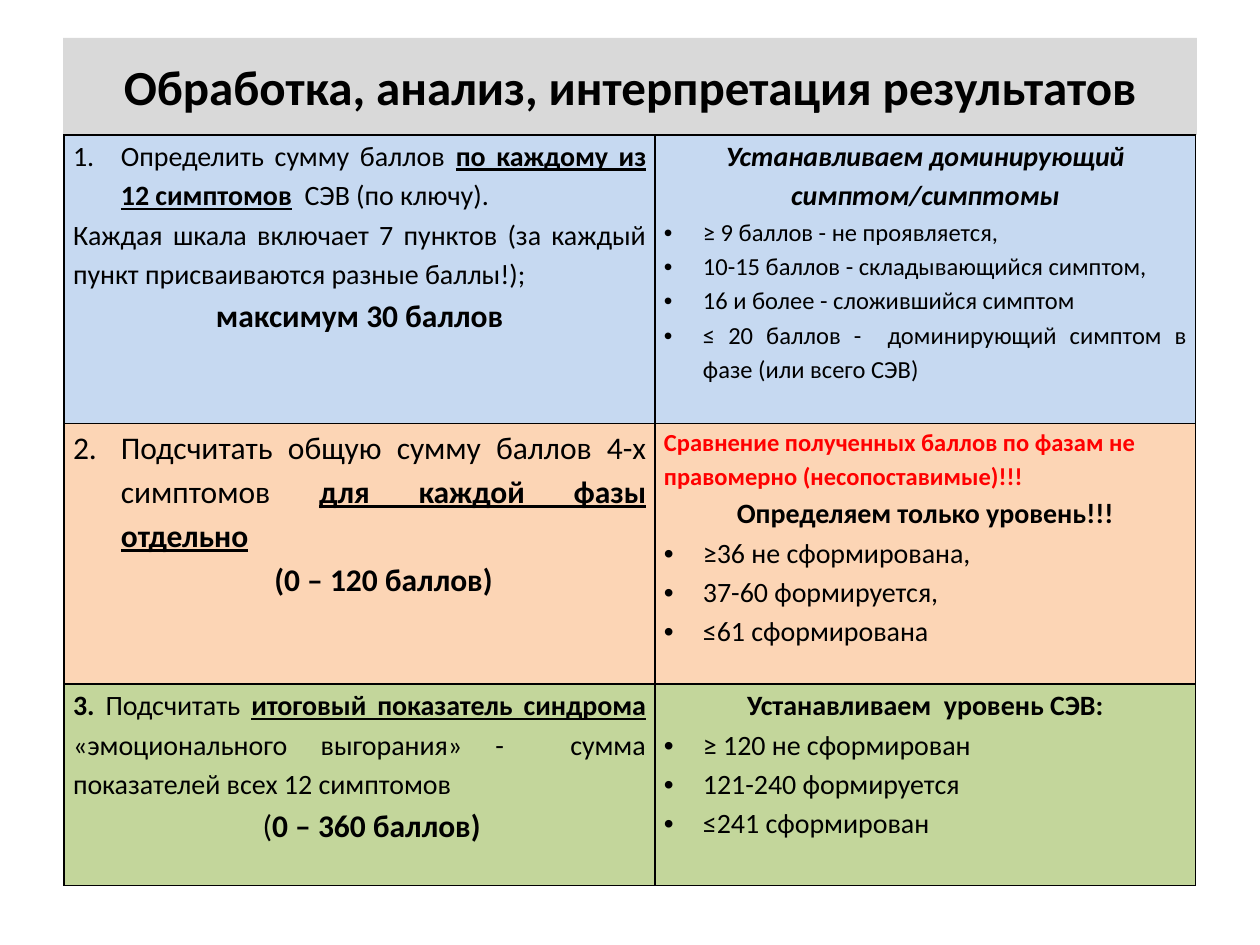
from lxml import etree
from pptx import Presentation
from pptx.dml.color import RGBColor
from pptx.enum import text
from pptx.oxml import ns
from pptx.util import Inches, Pt

FONT = "Calibri"
BLACK, RED, GREY = "000000", "FF0000", "D9D9D9"
BLUE, ORANGE, GREEN = "C6D9F1", "FCD5B5", "C3D69B"
LEFT, CENTER, JUSTIFY = (text.PP_ALIGN.LEFT, text.PP_ALIGN.CENTER,
                         text.PP_ALIGN.JUSTIFY)
KEY = {"bold": True, "underline": True}


def color(value):
    return RGBColor.from_string(value)


def add_xml(parent, tag, **attributes):
    return etree.SubElement(parent, ns.qn(tag),
                            {name: str(value) for name, value in attributes.items()})


def write(paragraph, *parts, size=16, bold=False, italic=False, hue=BLACK,
          align=JUSTIFY, spacing=1.15, indent=0, hanging=0, bullet=None, number=None):
    """Fill a paragraph; a part is a string or a (string, font settings) pair."""
    paragraph.alignment = align
    paragraph.line_spacing = spacing
    paragraph.space_before = paragraph.space_after = Pt(0)
    properties = paragraph._p.get_or_add_pPr()
    properties.set("marL", str(Inches(indent + hanging)))
    properties.set("indent", str(-Inches(hanging)))
    if bullet:
        add_xml(properties, "a:buFont", typeface="Arial")
        add_xml(properties, "a:buChar", char=bullet)
    elif number:
        add_xml(properties, "a:buFont", typeface=FONT)
        add_xml(properties, "a:buAutoNum", type="arabicPeriod", startAt=number)
    else:
        add_xml(properties, "a:buNone")
    for part in parts:
        words, extra = (part, {}) if isinstance(part, str) else part
        run = paragraph.add_run()
        run.text = words
        run.font.name = FONT
        run.font.color.rgb = color(hue)
        settings = {"size": Pt(size), "bold": bold, "italic": italic, **extra}
        for name, value in settings.items():
            setattr(run.font, name, value)


def line(*parts, **settings):
    return parts, settings


def bullets(*items, **settings):
    return [line(item, bullet="•", hanging=0.31, **settings) for item in items]


def add_title(slide, left, top, width, height):
    title = slide.shapes.title
    title.left, title.top, title.width, title.height = map(
        Inches, (left, top, width, height))
    title.fill.solid()
    title.fill.fore_color.rgb = color(GREY)
    frame = title.text_frame
    frame.word_wrap = True
    frame.auto_size = text.MSO_AUTO_SIZE.NONE
    frame.vertical_anchor = text.MSO_ANCHOR.MIDDLE
    write(frame.paragraphs[0], "Обработка, анализ, интерпретация результатов",
          size=28, bold=True, align=CENTER, spacing=1.0)


def add_borders(cell):
    """Draw the four edges, which stand before the fill in the cell's XML."""
    properties = cell._tc.get_or_add_tcPr()
    for position, side in enumerate(("a:lnL", "a:lnR", "a:lnT", "a:lnB")):
        edge = add_xml(properties, side, w=Pt(1))
        add_xml(add_xml(edge, "a:solidFill"), "a:srgbClr", val=BLACK)
        properties.insert(position, edge)


def fill_cell(cell, lines, fill):
    cell.margin_left = cell.margin_right = Inches(0.07)
    cell.margin_top = cell.margin_bottom = 0
    cell.fill.solid()
    cell.fill.fore_color.rgb = color(fill)
    add_borders(cell)
    frame = cell.text_frame
    for index, (parts, settings) in enumerate(lines):
        paragraph = frame.add_paragraph() if index else frame.paragraphs[0]
        write(paragraph, *parts, **settings)


SYMPTOMS = [
    line("Определить сумму баллов ", ("по каждому из 12 симптомов", KEY),
         "  СЭВ (по ключу).", number=1, hanging=0.38),
    line("Каждая шкала включает 7 пунктов (за каждый пункт присваиваются "
         "разные баллы!);"),
    line("максимум 30 баллов", size=18, bold=True, align=CENTER),
]
DOMINANT = [
    line("Устанавливаем доминирующий симптом/симптомы",
         bold=True, italic=True, align=CENTER),
    *bullets("≥ 9 баллов - не проявляется,",
             "10-15 баллов - складывающийся симптом,",
             "16 и более - сложившийся симптом",
             "≤ 20 баллов -  доминирующий симптом в фазе (или всего СЭВ)", size=14),
]
PHASES = [
    line("Подсчитать общую сумму баллов 4-х симптомов ",
         ("для каждой фазы отдельно", KEY), size=18, number=2, hanging=0.38),
    line("(0 – 120 баллов)", size=18, bold=True, align=CENTER, indent=0.38),
]
PHASE_LEVELS = [
    line("Сравнение полученных баллов по фазам не правомерно (несопоставимые)!!!",
         size=14, bold=True, hue=RED, align=LEFT),
    line("Определяем только уровень!!!", bold=True, align=CENTER),
    *bullets("≥36 не сформирована,", "37-60 формируется,", "≤61 сформирована",
             align=LEFT),
]
SYNDROME = [
    line(("3. ", {"bold": True}), "Подсчитать ",
         ("итоговый показатель синдрома", KEY),
         " «эмоционального выгорания» -  сумма показателей всех 12 симптомов"),
    line("(", ("0 – 360 баллов)", {"bold": True}), size=18, align=CENTER, indent=0.19),
]
SYNDROME_LEVELS = [
    line("Устанавливаем  уровень СЭВ:", bold=True, align=CENTER),
    *bullets("≥ 120 не сформирован", "121-240 формируется", "≤241 сформирован"),
]
STEPS = [
    (2.29, BLUE, SYMPTOMS, DOMINANT),
    (2.07, ORANGE, PHASES, PHASE_LEVELS),
    (1.6, GREEN, SYNDROME, SYNDROME_LEVELS),
]


def add_steps(slide, left, top, widths):
    height = sum(step[0] for step in STEPS)
    table = slide.shapes.add_table(
        len(STEPS), len(widths), Inches(left), Inches(top),
        Inches(sum(widths)), Inches(height)).table
    table.first_row = table.horz_banding = False
    for column, width in zip(table.columns, widths):
        column.width = Inches(width)
    for row, (row_height, fill, *contents) in zip(table.rows, STEPS):
        row.height = Inches(row_height)
        for cell, lines in zip(row.cells, contents):
            fill_cell(cell, lines, fill)


def main():
    deck = Presentation()
    deck.slide_width, deck.slide_height = Inches(10), Inches(7.5)
    slide = deck.slides.add_slide(deck.slide_layouts.get_by_name("Title Only"))
    add_title(slide, 0.5, 0.3, 9, 0.77)
    add_steps(slide, 0.51, 1.07, (4.69, 4.29))
    deck.save("out.pptx")


if __name__ == "__main__":
    main()
